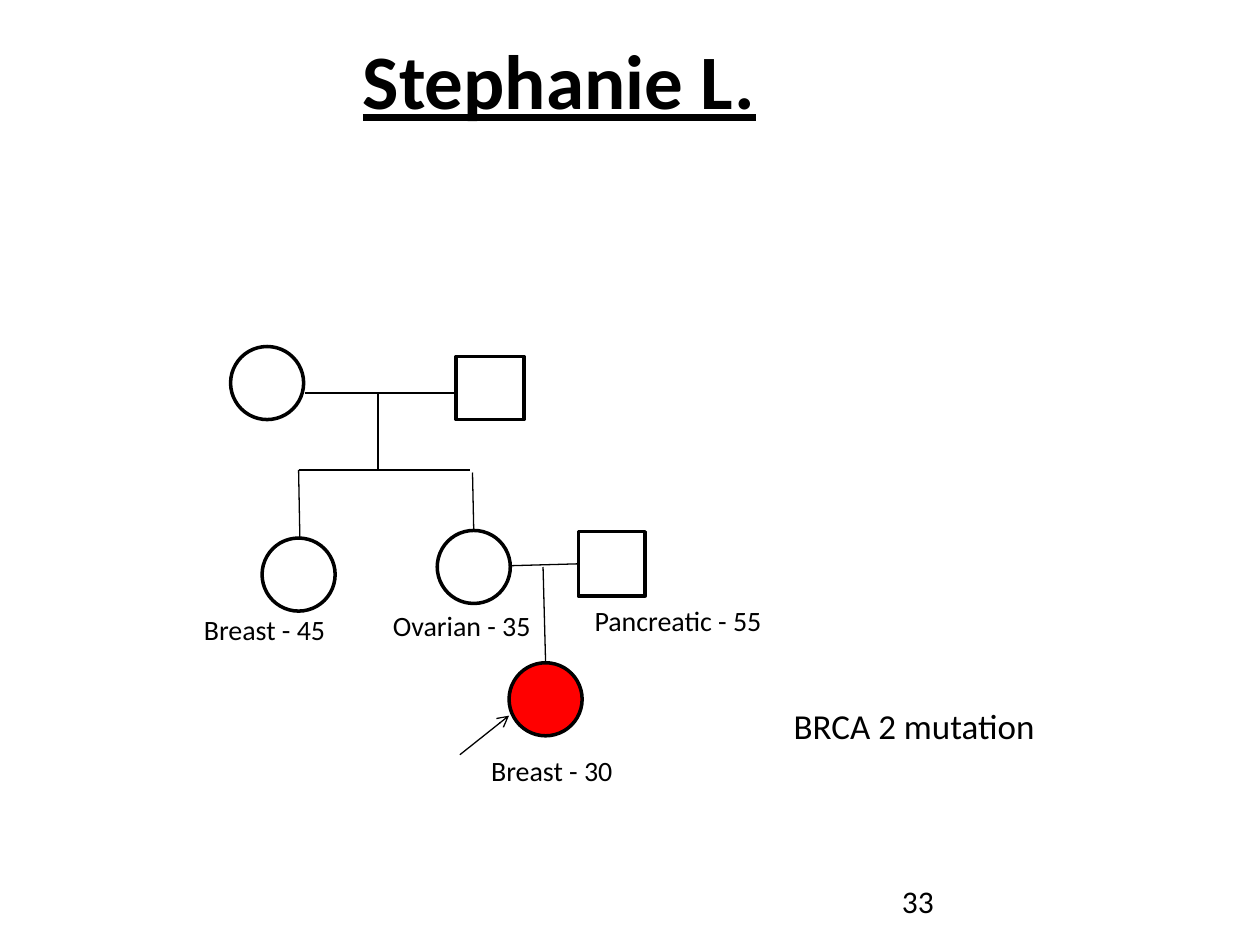
from lxml import etree
from pptx import Presentation
from pptx import util as u
from pptx.dml.color import RGBColor
from pptx.enum import shapes, text
from pptx.oxml.ns import qn

EMU_PER_PX = 9144  # 100 px to the inch
FONT = "Calibri"
BLACK, RED = "000000", "FF0000"
SYMBOL = 58  # diameter of a circle in the pedigree


def px(length):
    return u.Emu(length * EMU_PER_PX)


def color(hex_code):
    return RGBColor.from_string(hex_code)


def write(frame, words, size=16, bold=None, underline=None, align=text.PP_ALIGN.LEFT):
    frame.word_wrap = True
    frame.vertical_anchor = text.MSO_ANCHOR.TOP
    paragraph = frame.paragraphs[0]
    paragraph.alignment = align
    run = paragraph.add_run()
    run.text = words
    font = run.font
    font.name, font.size = FONT, u.Pt(size)
    font.bold, font.underline = bold, underline
    font.color.rgb = color(BLACK)


class Pedigree:
    def __init__(self, slide, outline=2, thin=0.75):
        self.slide, self.outline, self.thin = slide, outline, thin

    def title(self, words, *box):
        heading = self.slide.shapes.title
        heading.left, heading.top, heading.width, heading.height = map(px, box)
        write(heading.text_frame, words, size=44, bold=True, underline=True,
              align=text.PP_ALIGN.CENTER)

    def label(self, words, *box, size=16):
        label = self.slide.shapes.add_textbox(*map(px, box))
        write(label.text_frame, words, size=size)

    def person(self, kind, box, fill=None):
        person = self.slide.shapes.add_shape(kind, *map(px, box))
        person.shadow.inherit = False
        if fill:
            person.fill.solid()
            person.fill.fore_color.rgb = color(fill)
        else:
            person.fill.background()
        person.line.color.rgb = color(BLACK)
        person.line.width = u.Pt(self.outline)
        return person

    def woman(self, left, top, fill=None):
        return self.person(shapes.MSO_SHAPE.OVAL, (left, top, SYMBOL, SYMBOL), fill)

    def man(self, *box):
        return self.person(shapes.MSO_SHAPE.RECTANGLE, box)

    def line(self, *ends, arrow=False):
        line = self.slide.shapes.add_connector(shapes.MSO_CONNECTOR.STRAIGHT, *map(px, ends))
        line.line.color.rgb = color(BLACK)
        line.line.width = u.Pt(self.thin)
        if arrow:
            etree.SubElement(line.line._get_or_add_ln(), qn("a:tailEnd"), type="arrow")
        etree.SubElement(line._element.spPr, qn("a:effectLst"))
        return line


def main():
    deck = Presentation()
    deck.slide_width, deck.slide_height = px(1000), px(750)
    pedigree = Pedigree(deck.slides.add_slide(deck.slide_layouts[5]))

    # Title and page number
    pedigree.title("Stephanie L.", 13, 21, 862, 104)
    pedigree.label("33", 706, 695, 225, 40, size=18)

    # Family members, by generation
    pedigree.woman(183, 275)
    pedigree.man(362, 283, 54, 50)
    pedigree.woman(208, 427)
    pedigree.woman(347, 421)
    father = pedigree.man(459, 422, 53, 51)
    pedigree.woman(404, 526, fill=RED)

    # Grandparents and their descent lines
    pedigree.line(242, 312, 362, 312)
    pedigree.line(300, 373, 300, 313)
    pedigree.line(373, 373, 237, 373)
    pedigree.line(237, 373, 238, 427)
    pedigree.line(375, 375, 376, 421)

    # Parents and their descent line
    marriage = pedigree.line(405, 449, 459, 448)
    marriage.end_connect(father, 1)
    pedigree.line(431, 450, 433, 525)

    # Arrow to the patient
    pedigree.line(365, 599, 404, 568, arrow=True)

    # Diagnoses with age
    pedigree.label("Breast - 30", 380, 593, 135, 37)
    pedigree.label("Ovarian - 35", 302, 478, 148, 37)
    pedigree.label("Breast - 45", 152, 481, 168, 37)
    pedigree.label("Pancreatic - 55", 462, 474, 189, 37)
    pedigree.label("BRCA 2 mutation", 620, 554, 332, 44, size=20)

    deck.save("out.pptx")


if __name__ == "__main__":
    main()
